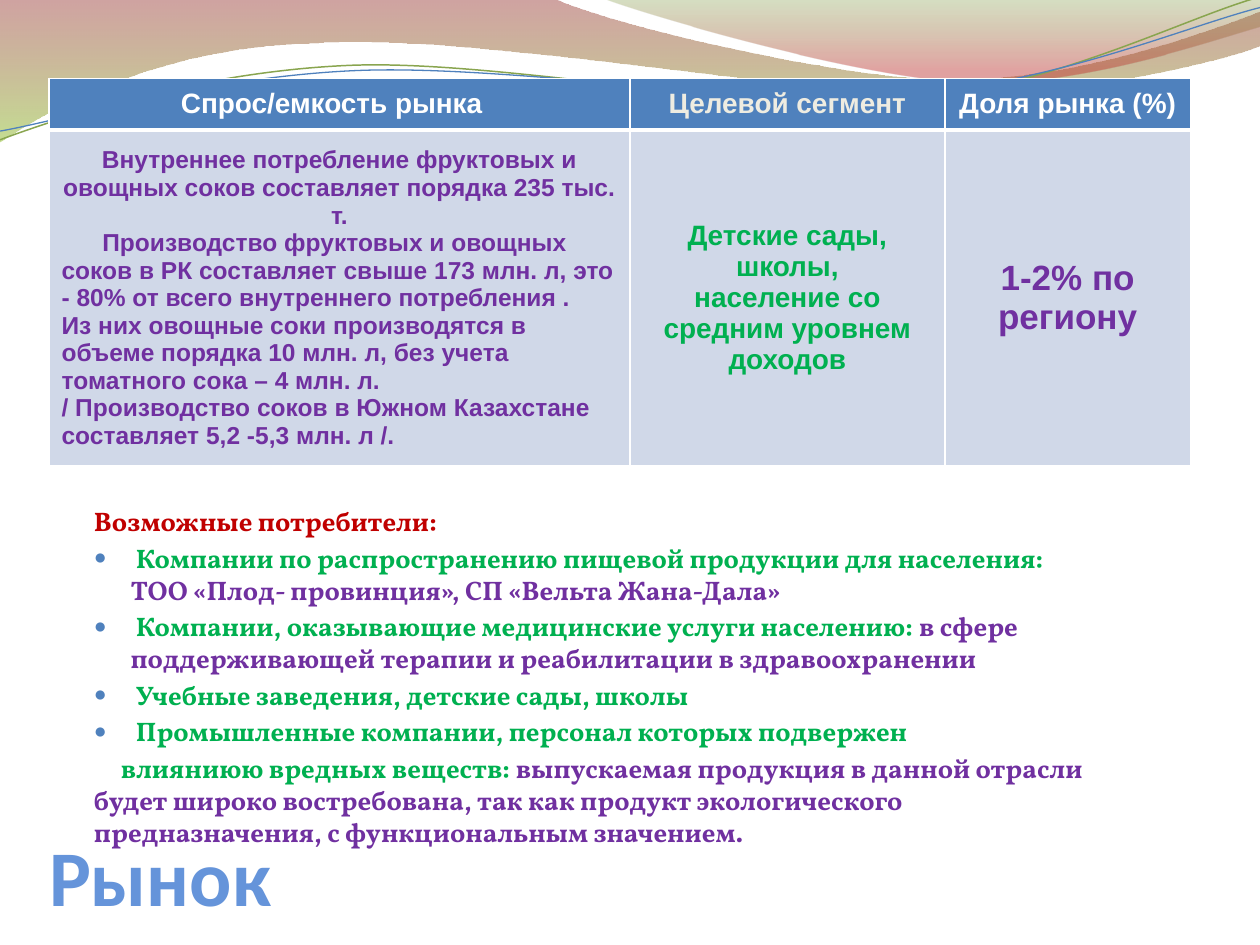
import pptx
import pptx.dml.color
import pptx.enum.text
import pptx.oxml
import pptx.oxml.ns
import pptx.util
from lxml import etree

Pt = pptx.util.Pt
qn = pptx.oxml.ns.qn
ALIGN = pptx.enum.text.PP_ALIGN
ANCHOR = pptx.enum.text.MSO_ANCHOR
COLORS = {
    name: pptx.dml.color.RGBColor.from_string(value)
    for name, value in {
        "white": "FFFFFF", "cream": "EEECE1", "blue": "4F81BD", "pale": "D0D8E8",
        "title": "6594DA", "red": "C00000", "green": "00B050", "purple": "7030A0",
        "wave_red": "973330", "wave_lime": "95C238", "wave_olive": "769537",
        "wave_rose": "BE3330", "line_green": "89A54F",
    }.items()
}

presentation = pptx.Presentation()
presentation.slide_width, presentation.slide_height = Pt(720), Pt(540)
slide = presentation.slides.add_slide(presentation.slide_layouts[6])


def add_curve(start, segments, closed):
    """Draw straight segments (1 point) and cubic Bezier segments (3 points)."""
    builder = slide.shapes.build_freeform(Pt(start[0]), Pt(start[1]), scale=1.0)
    builder.add_line_segments([(Pt(x), Pt(y)) for segment in segments for x, y in segment],
                              close=closed)
    curve = builder.convert_to_shape()
    curve.shadow.inherit = False
    # Join each run of three straight steps into one Bezier step
    steps = iter(list(curve._element.spPr.iter(qn("a:lnTo"))))
    for segment in segments:
        group = [next(steps) for _ in segment]
        if len(group) == 3:
            bezier = etree.Element(qn("a:cubicBezTo"))
            group[0].addprevious(bezier)
            for step in group:
                bezier.append(step[0])
                step.getparent().remove(step)
    return curve


# Translucent waves along the top: start, segments, gradient (position, colour, opacity %)
waves = [
    ((0, 0),
     [[(316.8, -0.7)],
      [(342.7, 12.2), (478.1, 45.4), (545.8, 45.4)],
      [(614.2, 45.4), (689.8, 18.7), (720, 6.5)],
      [(720.7, 25.9)],
      [(707.8, 31.7), (626.4, 54.7), (537.1, 54)],
      [(447.8, 53.3), (275, 20.2), (185, 24.5)],
      [(92.9, 25.9), (33.1, 59.8), (-0.7, 81.4)]],
     [(0, "wave_red", 45), (1, "wave_lime", 55)]),
    ((344.9, -0.7),
     [[(366.5, 7.9), (491, 44.6), (553.7, 46.8)],
      [(616.3, 49.7), (691.9, 23), (720, 15.1)],
      [(720, 0)]],
     [(0, "wave_olive", 30), (0.8, "wave_rose", 45)]),
]
for start, segments, gradient in waves:
    wave = add_curve(start, segments, True)
    wave.line.fill.background()
    wave.fill.gradient()
    wave.fill.gradient_angle = 270
    for stop, (position, color, _) in zip(wave.fill.gradient_stops, gradient):
        stop.position = position
        stop.color.rgb = COLORS[color]
    stop_colors = wave._element.spPr.iter(qn("a:srgbClr"))
    for stop_color, (_, _, opacity) in zip(stop_colors, gradient):
        etree.SubElement(stop_color, qn("a:alpha"), val=str(opacity * 1000))

# Thin lines following the waves
wave_lines = [
    ((0, 79.9),
     [[(34.6, 67), (113.8, 41), (199.4, 37.4)],
      [(284.4, 33.8), (427, 64.1), (513.4, 57.6)],
      [(599.8, 51.1), (675.4, 10.8), (718.6, -1.4)]], "line_green", 0.85),
    ((0, 74.9),
     [[(33.8, 69.1), (118.1, 43.9), (203.8, 40.3)],
      [(290.2, 36.7), (429.8, 60.5), (516.2, 54)],
      [(601.9, 48.2), (677.5, 15.1), (720, 4.3)]], "blue", 0.75),
]
for start, segments, color, width in wave_lines:
    wave_line = add_curve(start, segments, False)
    wave_line.fill.background()
    wave_line.line.color.rgb = COLORS[color]
    wave_line.line.width = Pt(width)


def style(paragraph, font_name, size, color=None):
    """Set the bold font shared by all runs of a paragraph."""
    paragraph.font.name, paragraph.font.size, paragraph.font.bold = font_name, Pt(size), True
    if color:
        paragraph.font.color.rgb = COLORS[color]


# Slide title
title = slide.shapes.add_textbox(Pt(28), Pt(472.3), Pt(644.4), Pt(54.7)).text_frame
title.word_wrap = True
title.vertical_anchor = ANCHOR.BOTTOM
title.margin_left = title.margin_right = title.margin_bottom = 0
title.text = "Рынок"
style(title.paragraphs[0], "Calibri", 45, "title")

# Possible consumers: bulleted or not, first-line indent, coloured runs
consumers = [
    (False, 0, [("Возможные потребители:", "red")]),
    (True, -20.9, [(" Компании по распространению пищевой продукции для населения: ", "green"),
                   ("ТОО «Плод- провинция», СП «Вельта Жана-Дала»", "purple")]),
    (True, -20.9, [(" Компании, оказывающие медицинские услуги населению: ", "green"),
                   ("в сфере поддерживающей терапии и реабилитации в здравоохранении", "purple")]),
    (True, -20.9, [(" Учебные заведения, детские сады, школы", "green")]),
    (True, -20.9, [(" Промышленные компании, персонал которых подвержен", "green")]),
    (False, 15.4, [("влияниюю вредных веществ: ", "green"),
                   ("выпускаемая продукция в данной отрасли будет широко востребована, так как "
                    "продукт экологического предназначения, с функциональным значением.",
                    "purple")]),
]
consumer_text = slide.shapes.add_textbox(Pt(39.3), Pt(281.5), Pt(596.2), Pt(196.6)).text_frame
consumer_text.word_wrap = True
consumer_text.margin_left, consumer_text.margin_top = Pt(14.4), Pt(7.2)
for index, (bulleted, indent, runs) in enumerate(consumers):
    paragraph = consumer_text.paragraphs[0] if index == 0 else consumer_text.add_paragraph()
    paragraph.space_before, paragraph.line_spacing = Pt(2.5), Pt(18.3)
    properties = paragraph._p.get_or_add_pPr()
    properties.set("marL", str(Pt(20.9) if bulleted else 0))
    properties.set("indent", str(Pt(indent)))
    if bulleted:
        bullet_color = etree.SubElement(properties, qn("a:buClr"))
        etree.SubElement(bullet_color, qn("a:srgbClr"), val=str(COLORS["blue"]))
        etree.SubElement(properties, qn("a:buSzPct"), val="80000")
        etree.SubElement(properties, qn("a:buFont"), typeface="Arial")
        etree.SubElement(properties, qn("a:buChar"), char="●")
    style(paragraph, "Vollkorn", 15.3)
    for words, color in runs:
        run = paragraph.add_run()
        run.text = words
        run.font.color.rgb = COLORS[color]

# Market table: each cell has paragraphs (text, centred, first-line indent), size, colour
market_rows = [
    [([("Спрос/емкость рынка", True, 0)], 16, "white"),
     ([("Целевой сегмент", True, 0)], 16, "cream"),
     ([("Доля рынка (%)", True, 0)], 16, "white")],
    [([("Внутреннее потребление фруктовых и овощных соков составляет порядка 235 тыс. т.",
        True, 0),
       ("Производство фруктовых и овощных соков в РК составляет свыше 173 млн. л, это "
        "- 80% от всего внутреннего потребления .", False, 23.3),
       ("Из них овощные соки производятся в объеме порядка 10 млн. л, без учета "
        "томатного сока – 4 млн. л.", False, 0),
       ("/ Производство соков в Южном Казахстане составляет 5,2 -5,3 млн. л /.", False, 0)],
      14, "purple"),
     ([("Детские сады, школы,", True, 0),
       ("население со средним уровнем доходов", True, 0)], 16, "green"),
     ([("1-2% по региону", True, 0)], 20, "purple")],
]
market_frame = slide.shapes.add_table(2, 3, Pt(28), Pt(44.8), Pt(652.3), Pt(204.5))
market = market_frame.table
for column, width in zip(market.columns, (331.9, 180, 140.4)):
    column.width = Pt(width)
for row, height in zip(market.rows, (29.5, 128.2)):
    row.height = Pt(height)
market_frame.height = Pt(204.5)
for row_index, row_cells in enumerate(market_rows):
    for column_index, (paragraphs, size, color) in enumerate(row_cells):
        cell = market.cell(row_index, column_index)
        cell.vertical_anchor = ANCHOR.MIDDLE
        cell.text = "\n".join(words for words, _, _ in paragraphs)
        for paragraph, (_, centered, indent) in zip(cell.text_frame.paragraphs, paragraphs):
            paragraph.alignment = ALIGN.CENTER if centered else ALIGN.LEFT
            paragraph._p.get_or_add_pPr().set("indent", str(Pt(indent)))
            style(paragraph, "Arial", size, color)
        cell_properties = cell._tc.get_or_add_tcPr()
        for side in "LRTB":
            thick = (row_index, side) in ((0, "B"), (1, "T"))
            border = etree.SubElement(cell_properties, qn(f"a:ln{side}"),
                                      w=str(Pt(3 if thick else 1)))
            border_fill = etree.SubElement(border, qn("a:solidFill"))
            etree.SubElement(border_fill, qn("a:srgbClr"), val=str(COLORS["white"]))
        cell.fill.solid()
        cell.fill.fore_color.rgb = COLORS["pale" if row_index else "blue"]
# The first heading sits slightly left of centre
market.cell(0, 0).margin_right = Pt(16)

presentation.save("out.pptx")
